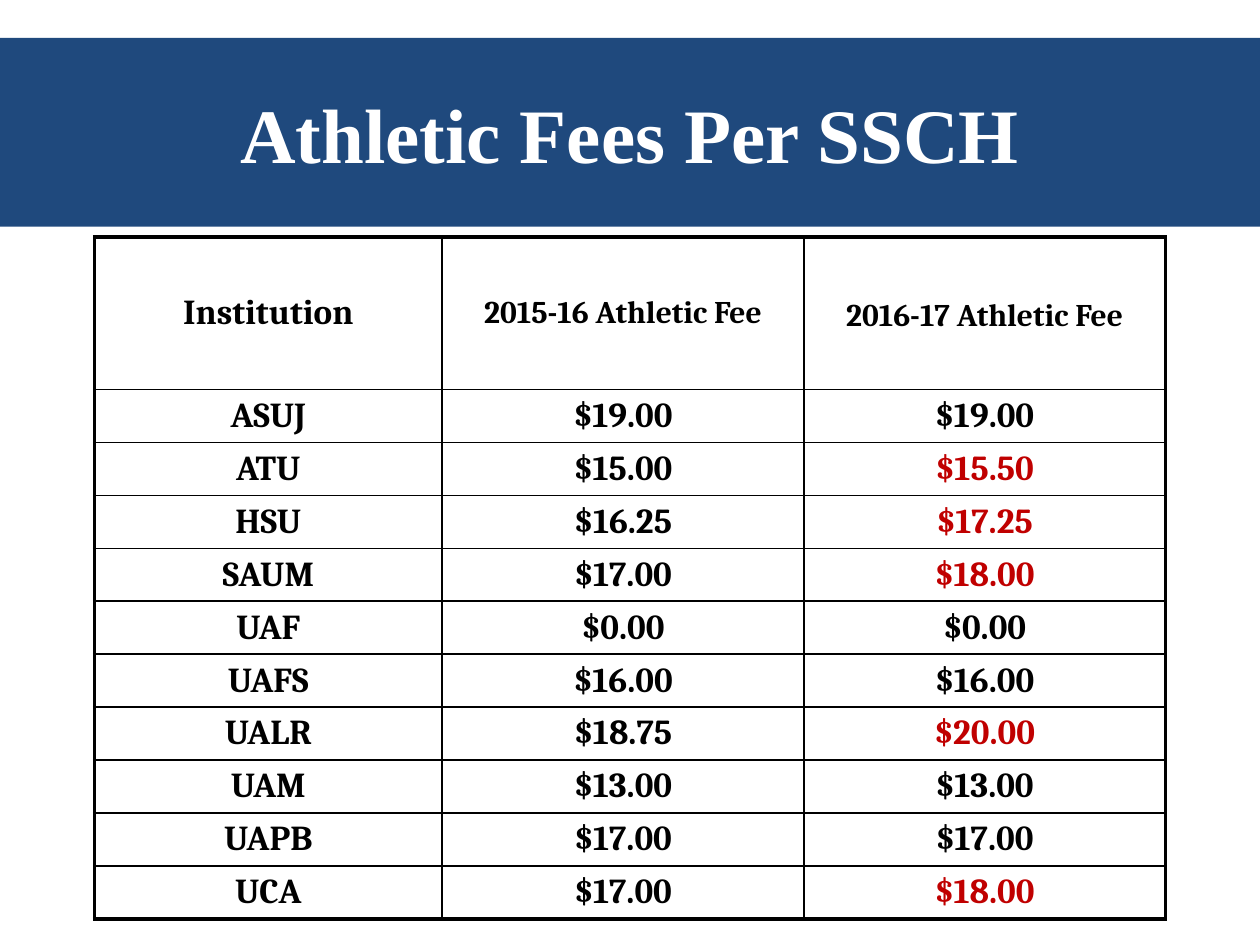
from dataclasses import dataclass

from lxml import etree
from pptx import Presentation
from pptx.dml.color import RGBColor
from pptx.enum.shapes import MSO_SHAPE
from pptx.enum.text import MSO_ANCHOR, PP_ALIGN
from pptx.oxml.ns import qn
from pptx.util import Inches, Pt

RECTANGLE = MSO_SHAPE.RECTANGLE
MIDDLE = MSO_ANCHOR.MIDDLE
CENTER = PP_ALIGN.CENTER


@dataclass(frozen=True)
class Theme:
    banner: str = "1F497D"
    paper: str = "FFFFFF"
    ink: str = "000000"
    changed: str = "C00000"
    title_font: str = "Times New Roman"
    table_font: str = "Cambria"
    title_size: int = 44
    body_size: int = 20
    year_size: int = 18
    outer_line: float = 2.25
    inner_line: float = 1


THEME = Theme()
TITLE = "Athletic Fees Per SSCH"
HEADERS = ("Institution", "2015-16 Athletic Fee", "2016-17 Athletic Fee")
FEES = (
    ("ASUJ", "$19.00", "$19.00"),
    ("ATU", "$15.00", "$15.50"),
    ("HSU", "$16.25", "$17.25"),
    ("SAUM", "$17.00", "$18.00"),
    ("UAF", "$0.00", "$0.00"),
    ("UAFS", "$16.00", "$16.00"),
    ("UALR", "$18.75", "$20.00"),
    ("UAM", "$13.00", "$13.00"),
    ("UAPB", "$17.00", "$17.00"),
    ("UCA", "$17.00", "$18.00"),
)
COLUMN_WIDTHS = (2.76, 2.87, 2.87)
HEADER_HEIGHT = 1.21
ROW_HEIGHT = 0.4


def write(frame, text, font, size, color):
    para = frame.paragraphs[0]
    para.text = text
    para.alignment = CENTER
    para.font.name = font
    para.font.size = Pt(size)
    para.font.bold = True
    para.font.color.rgb = RGBColor.from_string(color)


def set_borders(cell, outer_sides):
    properties = cell._tc.get_or_add_tcPr()
    for side, is_outer in outer_sides.items():
        width = THEME.outer_line if is_outer else THEME.inner_line
        line = etree.SubElement(properties, qn(f"a:ln{side}"), w=str(Pt(width)))
        fill = etree.SubElement(line, qn("a:solidFill"))
        etree.SubElement(fill, qn("a:srgbClr"), val=THEME.ink)


def add_banner(slide, box):
    banner = slide.shapes.add_shape(RECTANGLE, *box)
    banner.shadow.inherit = False
    banner.fill.solid()
    banner.fill.fore_color.rgb = RGBColor.from_string(THEME.banner)
    banner.line.fill.background()
    banner.text_frame.word_wrap = True
    banner.text_frame.vertical_anchor = MIDDLE
    write(banner.text_frame, TITLE, THEME.title_font, THEME.title_size, THEME.paper)


def add_fee_table(slide, box):
    rows = (HEADERS, *FEES)
    last_row, last_column = len(rows) - 1, len(HEADERS) - 1
    table = slide.shapes.add_table(len(rows), len(HEADERS), *box).table
    table.first_row = False
    table.horz_banding = False
    for column, width in zip(table.columns, COLUMN_WIDTHS):
        column.width = Inches(width)
    for row_index, values in enumerate(rows):
        is_header = row_index == 0
        table.rows[row_index].height = Inches(HEADER_HEIGHT if is_header else ROW_HEIGHT)
        for column_index, text in enumerate(values):
            cell = table.cell(row_index, column_index)
            set_borders(cell, {
                "L": column_index == 0,
                "R": column_index == last_column,
                "T": is_header,
                "B": row_index == last_row,
            })
            cell.fill.solid()
            cell.fill.fore_color.rgb = RGBColor.from_string(THEME.paper)
            is_latest = column_index == last_column
            is_changed = not is_header and is_latest and text != values[1]
            is_year = is_header and column_index > 0
            write(
                cell.text_frame,
                text,
                THEME.table_font,
                THEME.year_size if is_year else THEME.body_size,
                THEME.changed if is_changed else THEME.ink,
            )
            if is_header:
                cell.vertical_anchor = MIDDLE
                if is_latest:
                    cell.margin_top = Inches(0.1)


def main():
    deck = Presentation()
    deck.slide_width = Inches(10)
    deck.slide_height = Inches(7.5)
    slide = deck.slides.add_slide(deck.slide_layouts[6])
    add_banner(slide, (Inches(0), Inches(0.3), Inches(10), Inches(1.5)))
    add_fee_table(slide, (Inches(0.75), Inches(1.88), Inches(8.5), Inches(5.54)))
    deck.save("out.pptx")


if __name__ == "__main__":
    main()
